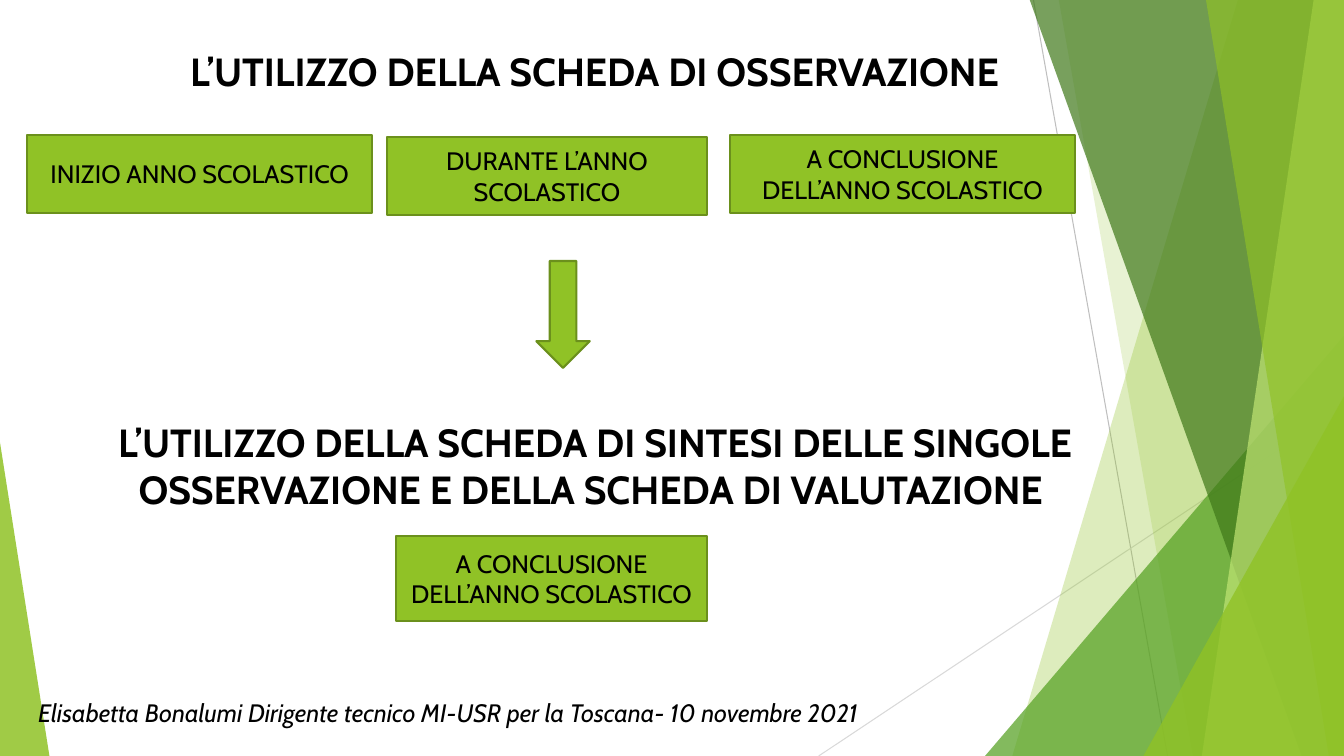
from lxml.etree import SubElement
from pptx import Presentation
from pptx.dml.color import RGBColor
from pptx.enum.shapes import MSO_CONNECTOR, MSO_SHAPE as Preset
from pptx.enum.text import MSO_ANCHOR as Anchor, PP_ALIGN as Align
from pptx.oxml.ns import qn
from pptx.util import Inches, Pt

WIDTH, HEIGHT = 13.33, 7.5
FONT = "Cabin"
BLACK = RGBColor(0x00, 0x00, 0x00)
GREEN = RGBColor(0x90, 0xC2, 0x26)
OUTLINE = RGBColor(0x6B, 0x90, 0x1C)
MID_GREEN = RGBColor(0x54, 0xA0, 0x21)
DARK_GREEN = RGBColor(0x3F, 0x78, 0x19)
PALE_GREEN = RGBColor(0xC0, 0xE4, 0x74)
GRAY = RGBColor(0xBF, 0xBF, 0xBF)
LIGHT_GRAY = RGBColor(0xD9, 0xD9, 0xD9)

# Right-hand bands: top-left x, bottom-left x, colour, opacity in percent
BACK_BANDS = [(12.28, 10.04, GREEN, 30), (10.5, 11.83, GREEN, 20)]
FRONT_BANDS = [
    (10.21, 12.91, DARK_GREEN, 70),
    (13.03, 11.92, PALE_GREEN, 70),
    (11.96, 13.18, GREEN, 65),
]

# Process boxes: text, left, top, width, height
STAGES = [
    ("INIZIO ANNO SCOLASTICO", 0.27, 1.34, 3.42, 0.77),
    ("DURANTE L’ANNO SCOLASTICO", 3.84, 1.36, 3.17, 0.77),
    ("A CONCLUSIONE DELL’ANNO SCOLASTICO", 7.24, 1.34, 3.42, 0.77),
    ("A CONCLUSIONE DELL’ANNO SCOLASTICO", 3.93, 5.32, 3.08, 0.84),
]


def paint(shape, color, opacity=100, outline=None):
    shape.shadow.inherit = False
    shape.fill.solid()
    shape.fill.fore_color.rgb = color
    if opacity < 100:
        tint = shape.fill._xPr.find(qn("a:solidFill"))[0]
        SubElement(tint, qn("a:alpha"), val=str(opacity * 1000))
    if outline is None:
        shape.line.fill.background()
    else:
        shape.line.color.rgb = outline
        shape.line.width = Pt(1.5)


def add_ray(slide, start, end, color):
    ray = slide.shapes.add_connector(
        MSO_CONNECTOR.STRAIGHT, *map(Inches, start + end))
    ray.line.color.rgb = color
    ray.line.width = Pt(0.75)
    SubElement(ray._element.spPr, qn("a:effectLst"))


def add_band(slide, top_x, bottom_x, color, opacity):
    corners = [(top_x, -0.01), (WIDTH, -0.01), (WIDTH, HEIGHT), (bottom_x, HEIGHT)]
    points = [(Inches(x), Inches(y)) for x, y in corners]
    outline = slide.shapes.build_freeform(*points[0])
    outline.add_line_segments(points[1:], close=True)
    paint(outline.convert_to_shape(), color, opacity)


def add_corner(slide, left, top, width, apex, color, opacity):
    """Triangle standing on the bottom edge of the slide."""
    corner = slide.shapes.add_shape(
        Preset.ISOSCELES_TRIANGLE, *map(Inches, (left, top, width, HEIGHT - top)))
    corner.adjustments[0] = apex
    paint(corner, color, opacity)


def write(shape, text, size=18, bold=False, italic=False,
          align=Align.CENTER, anchor=Anchor.TOP):
    frame = shape.text_frame
    frame.word_wrap = True
    frame.vertical_anchor = anchor
    paragraph = frame.paragraphs[0]
    paragraph.alignment = align
    run = paragraph.add_run()
    run.text = text
    run.font.name = FONT
    run.font.size = Pt(size)
    run.font.bold = bold
    run.font.italic = italic
    run.font.color.rgb = BLACK


def add_text(slide, text, left, top, width, height, **style):
    box = slide.shapes.add_textbox(*map(Inches, (left, top, width, height)))
    write(box, text, **style)


def add_block(slide, preset, left, top, width, height):
    block = slide.shapes.add_shape(preset, *map(Inches, (left, top, width, height)))
    paint(block, GREEN, outline=OUTLINE)
    return block


def add_backdrop(slide):
    add_ray(slide, (10.25, 0), (11.58, HEIGHT), GRAY)
    add_ray(slide, (WIDTH, 4.03), (8.12, HEIGHT), LIGHT_GRAY)
    for band in BACK_BANDS:
        add_band(slide, *band)
    add_corner(slide, 9.77, 3.33, 3.56, 1, MID_GREEN, 72)
    for band in FRONT_BANDS:
        add_band(slide, *band)
    add_corner(slide, 11.34, 3.93, 1.99, 1, GREEN, 80)
    add_corner(slide, 0, 4.39, 0.49, 0, GREEN, 85)


def main():
    deck = Presentation()
    deck.slide_width, deck.slide_height = Inches(WIDTH), Inches(HEIGHT)
    slide = deck.slides.add_slide(deck.slide_layouts[6])
    add_backdrop(slide)

    # Headings
    add_text(slide, "L’UTILIZZO DELLA SCHEDA DI OSSERVAZIONE",
             1.47, 0.42, 8.85, 1.04, size=28, bold=True)
    add_text(slide, "L’UTILIZZO DELLA SCHEDA DI SINTESI DELLE SINGOLE "
             "OSSERVAZIONE E DELLA SCHEDA DI VALUTAZIONE ",
             0.34, 4.1, 11.12, 1.04, size=28, bold=True)

    # Stages of the school year and the arrow between the two parts
    for text, *place in STAGES:
        stage = add_block(slide, Preset.FLOWCHART_PROCESS, *place)
        write(stage, text, anchor=Anchor.MIDDLE)
    add_block(slide, Preset.DOWN_ARROW, 5.32, 2.59, 0.53, 1.06)

    # Footer
    add_text(slide, "Elisabetta Bonalumi Dirigente tecnico MI-USR per la Toscana- "
             "10 novembre 2021",
             0.28, 6.87, 11.11, 0.4, italic=True, align=Align.LEFT)
    deck.save("out.pptx")


if __name__ == "__main__":
    main()
